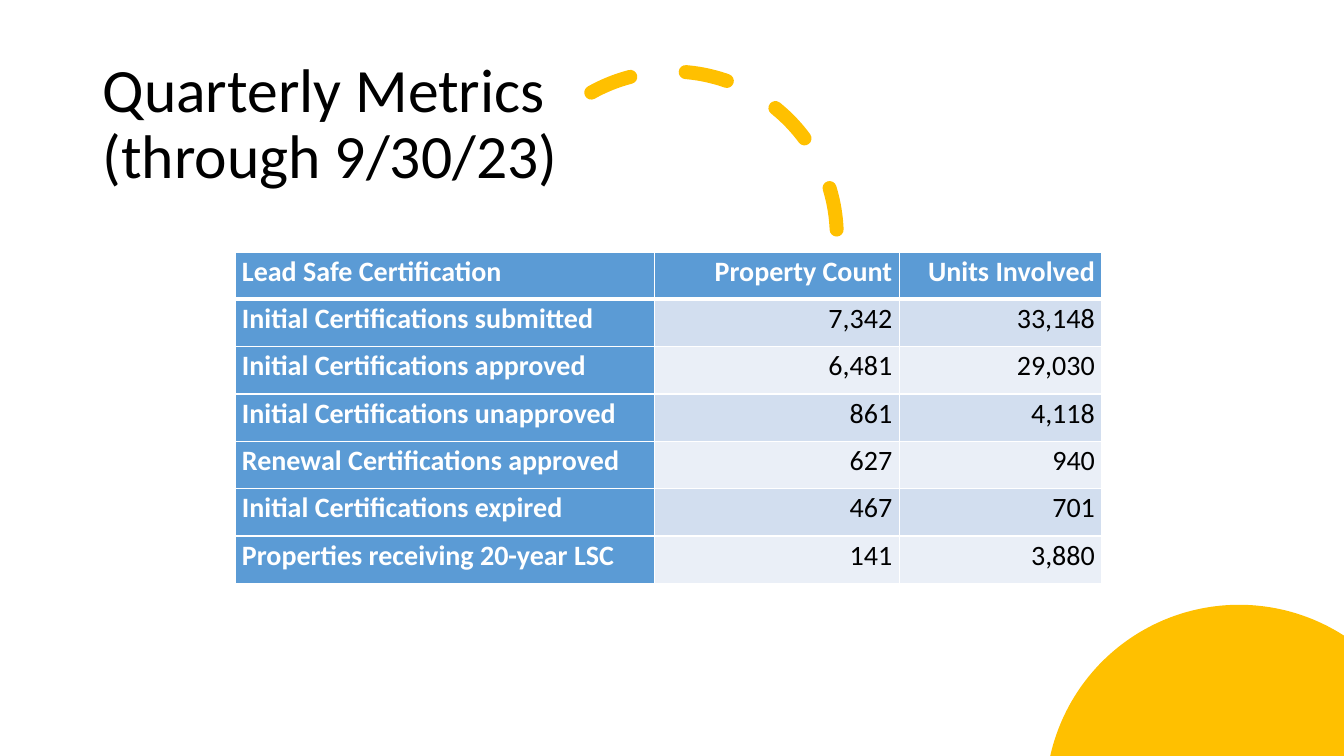
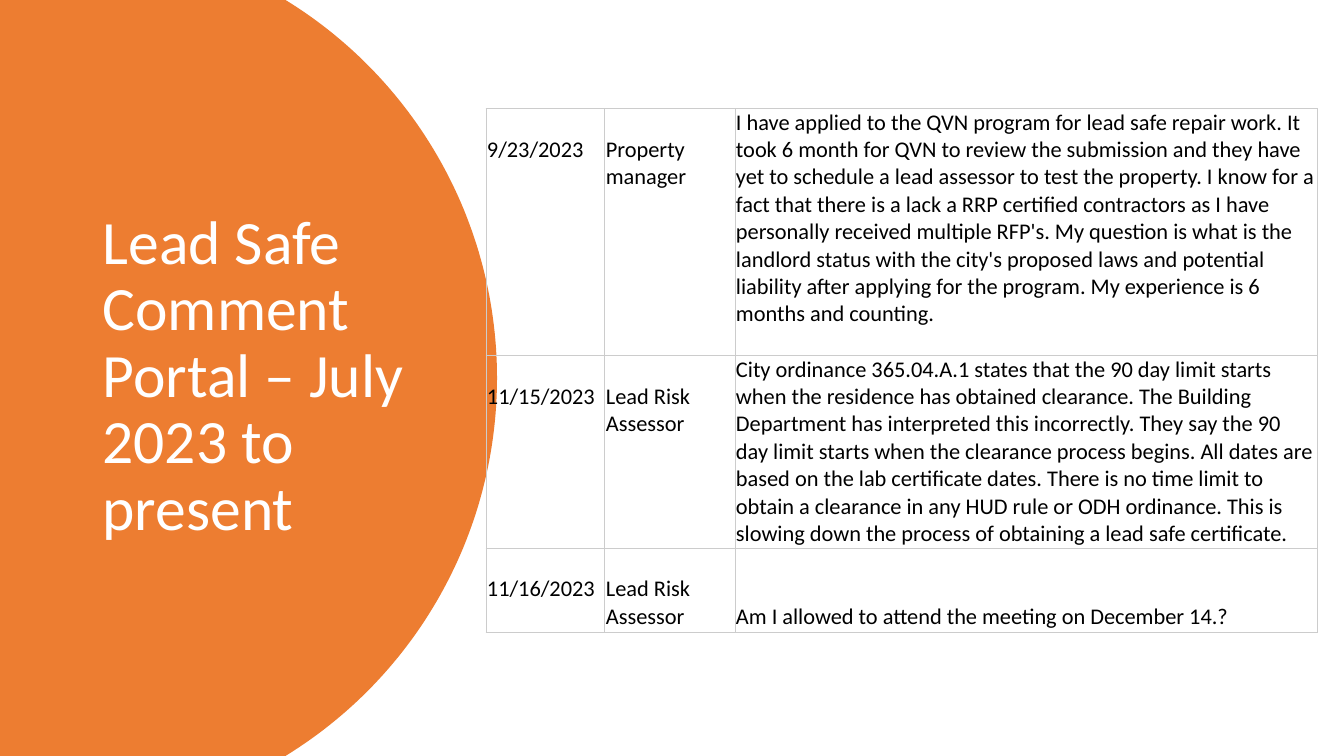
import math

from lxml import etree
from pptx import Presentation
from pptx.dml.color import RGBColor
from pptx.enum.dml import MSO_LINE
from pptx.enum.shapes import MSO_SHAPE
from pptx.enum.text import MSO_ANCHOR, PP_ALIGN
from pptx.oxml.ns import qn
from pptx.util import Inches, Pt

ARC, DASH = MSO_SHAPE.ARC, MSO_LINE.DASH
MIDDLE = MSO_ANCHOR.MIDDLE
LEFT, RIGHT = PP_ALIGN.LEFT, PP_ALIGN.RIGHT

FONT = "Calibri"
WIDTH, HEIGHT = 13.33, 7.5
COLORS = {
    "black": "000000",
    "white": "FFFFFF",
    "gold": "FFC000",
    "orange": "ED7D31",
    "blue": "5B9BD5",
    "band_dark": "D2DEEF",
    "band_light": "EAEFF7",
    "grid": "CCCCCC",
}

METRICS = [
    ("Lead Safe Certification", "Property Count", "Units Involved"),
    ("Initial Certifications submitted", "7,342", "33,148"),
    ("Initial Certifications approved", "6,481", "29,030"),
    ("Initial Certifications unapproved", "861", "4,118"),
    ("Renewal Certifications approved", "627", "940"),
    ("Initial Certifications expired", "467", "701"),
    ("Properties receiving 20-year LSC", "141", "3,880"),
]
COMMENTS = [
    ("9/23/2023", "Property manager",
     "I have applied to the QVN program for lead safe repair work. It took 6 month "
     "for QVN to review the submission and they have yet to schedule a lead assessor "
     "to test the property. I know for a fact that there is a lack a RRP certified "
     "contractors as I have personally received multiple RFP's. My question is what "
     "is the landlord status with the city's proposed laws and potential liability "
     "after applying for the program. My experience is 6 months and counting."),
    ("11/15/2023", "Lead Risk Assessor",
     "City ordinance 365.04.A.1 states that the 90 day limit starts when the "
     "residence has obtained clearance. The Building Department has interpreted this "
     "incorrectly. They say the 90 day limit starts when the clearance process "
     "begins. All dates are based on the lab certificate dates. There is no time "
     "limit to obtain a clearance in any HUD rule or ODH ordinance. This is slowing "
     "down the process of obtaining a lead safe certificate."),
    ("11/16/2023", "Lead Risk Assessor",
     "Am I allowed to attend the meeting on December 14.?"),
]
COMMENT_LINE = 0.27
COMMENT_ROW_LINES = (9, 7, 3)


def rgb(name):
    return RGBColor.from_string(COLORS[name])


class Deck:
    def __init__(self):
        self.prs = Presentation()
        self.prs.slide_width, self.prs.slide_height = Inches(WIDTH), Inches(HEIGHT)
        self.s = None

    def new_slide(self):
        self.s = self.prs.slides.add_slide(self.prs.slide_layouts[6])

    def style(self, p, text, size, color, bold=False):
        p.text = text
        p.font.name, p.font.size, p.font.bold = FONT, Pt(size), bold
        p.font.color.rgb = rgb(color)

    def title(self, text, x, y, w, h, color="black"):
        sp = self.s.shapes.add_textbox(Inches(x), Inches(y), Inches(w), Inches(h))
        tf = sp.text_frame
        tf.word_wrap, tf.vertical_anchor = True, MIDDLE
        p = tf.paragraphs[0]
        self.style(p, text, 44, color)
        p.line_spacing = 0.9

    def cut_circle(self, cx, cy, r, start, end, corners, color):
        """Fill the arc from start to end (degrees, clockwise), closed via corners."""
        steps = 120
        angles = [math.radians(start + (end - start) * i / steps)
                  for i in range(steps + 1)]
        points = [(cx + r * math.cos(a), cy + r * math.sin(a)) for a in angles]
        points = [(Inches(x), Inches(y)) for x, y in points + corners]
        builder = self.s.shapes.build_freeform(*points[0])
        builder.add_line_segments(points[1:], close=True)
        sp = builder.convert_to_shape()
        sp.shadow.inherit = False
        sp.fill.solid()
        sp.fill.fore_color.rgb = rgb(color)
        sp.line.fill.background()

    def dashed_arc(self, x, y, size, start, color):
        """Draw a round-capped arc from start degrees to the rightmost point."""
        sp = self.s.shapes.add_shape(ARC, Inches(x), Inches(y), Inches(size), Inches(size))
        sp.shadow.inherit = False
        sp.adjustments[0] = start * 0.6  # 60000 units a degree over 100000
        sp.fill.background()
        sp.line.color.rgb = rgb(color)
        sp.line.width, sp.line.dash_style = Pt(10), DASH
        sp._element.spPr.find(qn("a:ln")).set("cap", "rnd")

    def table(self, x, y, widths, heights):
        frame = self.s.shapes.add_table(len(heights), len(widths), Inches(x), Inches(y),
                                        Inches(sum(widths)), Inches(sum(heights)))
        table = frame.table
        table.first_row = table.horz_banding = False
        for column, w in zip(table.columns, widths):
            column.width = Inches(w)
        for row, h in zip(table.rows, heights):
            row.height = Inches(h)
        return table

    def cell(self, cell, text, size, color, inset, top=0, bold=False, fill=None):
        cell.margin_left = cell.margin_right = Inches(inset)
        cell.margin_top, cell.margin_bottom = Inches(top), 0
        if fill:
            cell.fill.solid()
            cell.fill.fore_color.rgb = rgb(fill)
        else:
            cell.fill.background()
        p = cell.text_frame.paragraphs[0]
        self.style(p, text, size, color, bold)
        return p

    def borders(self, cell, color, width, **side_widths):
        """Line all four sides; side_widths overrides single ones by L, R, T, B."""
        tc_pr = cell._tc.get_or_add_tcPr()
        for i, side in enumerate("LRTB"):
            ln = etree.Element(qn(f"a:ln{side}"), w=str(Pt(side_widths.get(side, width))))
            fill = etree.SubElement(ln, qn("a:solidFill"))
            etree.SubElement(fill, qn("a:srgbClr"), val=COLORS[color])
            tc_pr.insert(i, ln)


def metrics_slide(deck):
    deck.new_slide()
    deck.cut_circle(12.29, 7.92, 1.92, 192.6, 302.8, [(WIDTH, HEIGHT)], "gold")
    deck.dashed_arc(5.03, 0.71, 3.27, 240.7, "gold")
    deck.title("Quarterly Metrics (through 9/30/23)", 0.92, 0.52, 5.75, 1.45)
    table = deck.table(2.33, 2.5, (4.16, 2.43, 2.01), [0.47] * len(METRICS))
    for i, row in enumerate(METRICS):
        for j, text in enumerate(row):
            heading = i == 0 or j == 0
            band = "band_dark" if i % 2 else "band_light"
            cell = table.cell(i, j)
            p = deck.cell(cell, text, 20, "white" if heading else "black", 0.07,
                          bold=heading, fill="blue" if heading else band)
            p.alignment = RIGHT if j else LEFT
            p.line_spacing = 1.07
            p.space_before = p.space_after = Pt(3)
            deck.borders(cell, "white", 1, T=3 if i == 1 else 1, B=3 if i == 0 else 1)


def comments_slide(deck):
    deck.new_slide()
    deck.cut_circle(0.53, 3.75, 4.4, -58.46, 58.46, [(0, HEIGHT), (0, 0)], "orange")
    deck.title("Lead Safe Comment Portal – July 2023 to present",
               0.92, 0.7, 3.23, 6.09, "white")
    heights = [n * COMMENT_LINE + 0.02 for n in COMMENT_ROW_LINES]
    table = deck.table(4.82, 1.08, (1.18, 1.29, 5.78), heights)
    last = len(COMMENTS) - 1
    for i, row in enumerate(COMMENTS):
        lines_above = (1, 1, 2 if i == last else 0)
        for j, text in enumerate(row):
            cell = table.cell(i, j)
            deck.cell(cell, text, 16, "black", 0.01, top=lines_above[j] * COMMENT_LINE)
            deck.borders(cell, "grid", 0.75)


def main():
    deck = Deck()
    metrics_slide(deck)
    comments_slide(deck)
    deck.prs.save("out.pptx")


if __name__ == "__main__":
    main()
